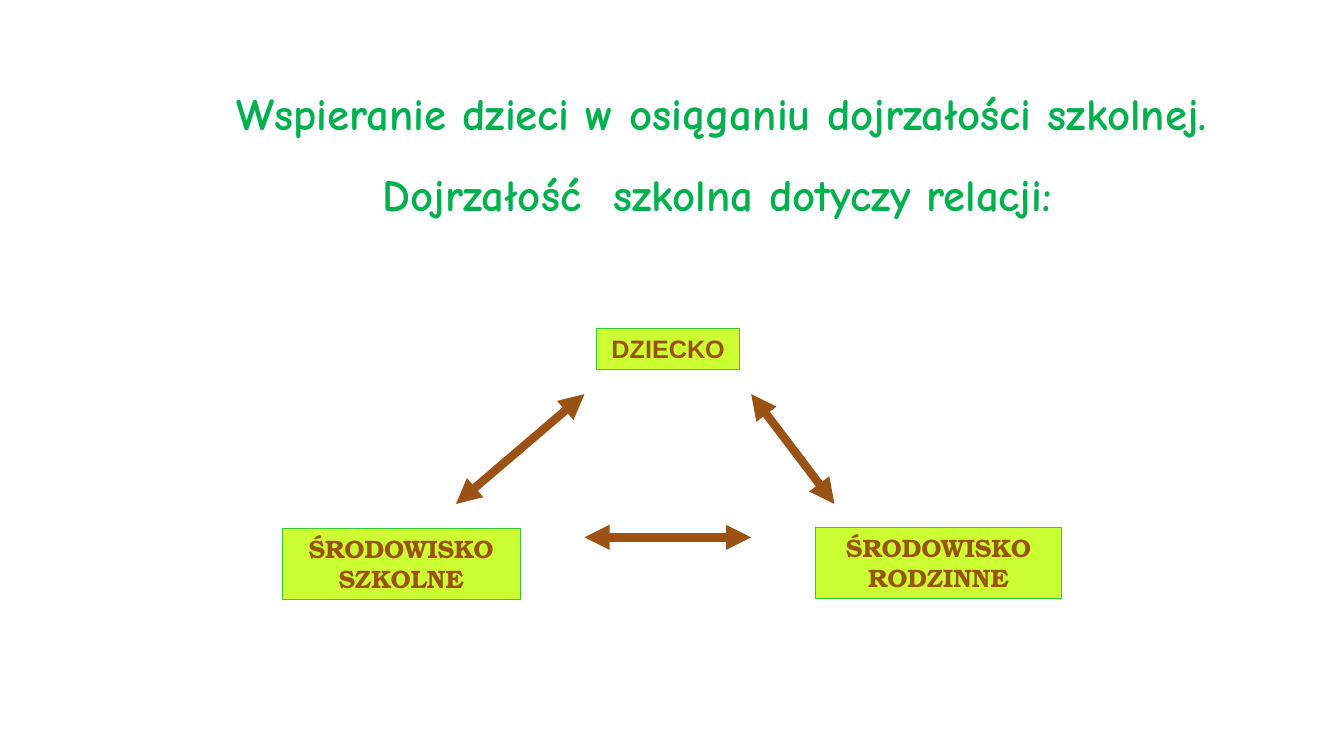
"""Build the slide on school readiness and the relations it depends on."""
from dataclasses import dataclass

from lxml import etree
from pptx import Presentation
from pptx.dml.color import RGBColor
from pptx.enum import shapes, text
from pptx.oxml import ns
from pptx.util import Cm, Pt


@dataclass(frozen=True)
class Theme:
    """Colours, typefaces and type sizes of the slide."""
    heading: RGBColor = RGBColor(0x00, 0xB0, 0x50)
    accent: RGBColor = RGBColor(0x9A, 0x53, 0x15)
    box_fill: RGBColor = RGBColor(0xCC, 0xFF, 0x33)
    box_line: RGBColor = RGBColor(0x33, 0xCC, 0x33)
    heading_font: str = "Comic Neue"
    child_font: str = "Arial"
    setting_font: str = "TeX Gyre Bonum"
    heading_size: Pt = Pt(32)
    label_size: Pt = Pt(18)
    box_width: Pt = Pt(0.75)
    arrow_width: Pt = Pt(6)


THEME = Theme()

HEADING = (
    ("Wspieranie dzieci w osiąganiu dojrzałości szkolnej.", 0.24),
    ("Dojrzałość  szkolna dotyczy relacji:", 0),
)

PARTIES = (
    ("DZIECKO", THEME.child_font, (15.03, 8.27, 3.62, 1.04)),
    ("ŚRODOWISKO RODZINNE", THEME.setting_font, (20.55, 13.29, 6.2, 1.8)),
    ("ŚRODOWISKO SZKOLNE", THEME.setting_font, (7.11, 13.32, 6, 1.8)),
)

RELATIONS = (
    ((18.93, 9.93), (21.03, 12.7)),
    ((11.49, 12.7), (14.73, 9.93)),
    ((14.73, 13.54), (18.93, 13.54)),
)


def apply_format(target, values):
    """Set every attribute named in values on target."""
    for attribute, value in values.items():
        setattr(target, attribute, value)


def write_paragraph(paragraph, wording, font, size, color, spacing):
    """Fill a paragraph with centred bold text."""
    paragraph.text = wording
    apply_format(paragraph, {"alignment": text.PP_ALIGN.CENTER,
                             "line_spacing": spacing, "space_before": Pt(0)})
    apply_format(paragraph.font, {"name": font, "size": size, "bold": True})
    paragraph.font.color.rgb = color


def add_heading(slide):
    """Place the two-line heading in the title placeholder."""
    title = slide.shapes.title
    apply_format(title, {"left": Cm(2.97), "top": Cm(0.61),
                         "width": Cm(30.23), "height": Cm(5.69)})
    frame = title.text_frame
    apply_format(frame, {"word_wrap": True, "auto_size": text.MSO_AUTO_SIZE.NONE,
                         "vertical_anchor": text.MSO_ANCHOR.TOP,
                         "margin_top": Cm(0.87)})
    for index, (line, indent) in enumerate(HEADING):
        paragraph = frame.add_paragraph() if index else frame.paragraphs[0]
        write_paragraph(paragraph, line, THEME.heading_font,
                        THEME.heading_size, THEME.heading, 1.5)
        paragraph._p.get_or_add_pPr().set("marL", str(int(Cm(indent))))


def add_party(slide, label, font, place):
    """Add a labelled box for one party of the relation."""
    party = slide.shapes.add_shape(shapes.MSO_SHAPE.RECTANGLE, *map(Cm, place))
    party.shadow.inherit = False
    party.fill.solid()
    party.fill.fore_color.rgb = THEME.box_fill
    party.line.color.rgb = THEME.box_line
    party.line.width = THEME.box_width
    apply_format(party.text_frame, {
        "word_wrap": True, "auto_size": text.MSO_AUTO_SIZE.SHAPE_TO_FIT_TEXT,
        "vertical_anchor": text.MSO_ANCHOR.TOP})
    write_paragraph(party.text_frame.paragraphs[0], label, font,
                    THEME.label_size, THEME.accent, 1.0)


def add_relation(slide, start, end):
    """Add a double-headed arrow between two parties."""
    relation = slide.shapes.add_connector(
        shapes.MSO_CONNECTOR.STRAIGHT, *map(Cm, start + end))
    relation.line.color.rgb = THEME.accent
    relation.line.width = THEME.arrow_width
    outline = relation.line._get_or_add_ln()
    for tip in ("a:headEnd", "a:tailEnd"):
        etree.SubElement(outline, ns.qn(tip), type="triangle")
    etree.SubElement(relation._element.spPr, ns.qn("a:effectLst"))


def main():
    """Build and save the presentation."""
    deck = Presentation()
    apply_format(deck, {"slide_width": Cm(33.87), "slide_height": Cm(19.05)})
    slide = deck.slides.add_slide(deck.slide_layouts.get_by_name("Title Only"))
    add_heading(slide)
    for start, end in RELATIONS:
        add_relation(slide, start, end)
    for label, font, place in PARTIES:
        add_party(slide, label, font, place)
    deck.save("out.pptx")


if __name__ == "__main__":
    main()
